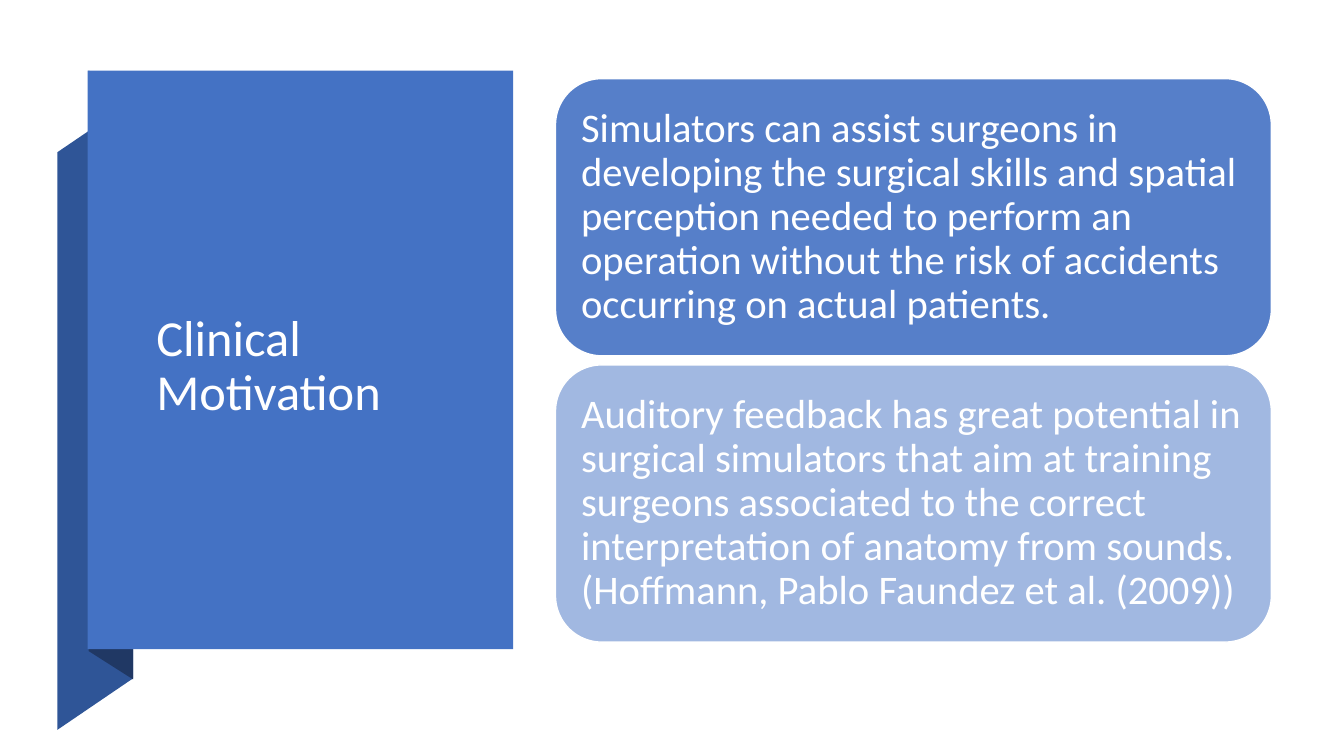
from pptx import Presentation
from pptx.dml.color import RGBColor
from pptx.enum.shapes import MSO_SHAPE
from pptx.enum.text import MSO_ANCHOR, MSO_AUTO_SIZE, PP_ALIGN
from pptx.oxml.ns import qn
from pptx.util import Inches, Pt
from lxml.etree import SubElement

BLUE = RGBColor(0x44, 0x72, 0xC4)
RIBBON_BLUE = RGBColor(0x2F, 0x55, 0x97)
FOLD_BLUE = RGBColor(0x20, 0x38, 0x64)
WHITE = RGBColor(0xFF, 0xFF, 0xFF)

prs = Presentation()
prs.slide_width = Inches(13.33)
prs.slide_height = Inches(7.5)
slide = prs.slides.add_slide(prs.slide_layouts[5])
shapes = slide.shapes


def write_text(shape, text, size, inset_x, inset_y):
    frame = shape.text_frame
    frame.text = text
    settings = {
        "word_wrap": True,
        "auto_size": MSO_AUTO_SIZE.NONE,
        "vertical_anchor": MSO_ANCHOR.MIDDLE,
        "margin_left": Inches(inset_x),
        "margin_right": Inches(inset_x),
        "margin_top": Inches(inset_y),
        "margin_bottom": Inches(inset_y),
    }
    for name, value in settings.items():
        setattr(frame, name, value)
    paragraph = frame.paragraphs[0]
    paragraph.alignment = PP_ALIGN.LEFT
    paragraph.line_spacing = 0.9
    font = paragraph.font
    font.name = "Calibri"
    font.size = Pt(size)
    font.color.rgb = WHITE


# Folded ribbon behind the title panel
ribbon_parts = [
    (RIBBON_BLUE, [(0.57, 7.24), (1.32, 6.73), (1.32, 1), (0.57, 1.51)]),
    (FOLD_BLUE, [(0.88, 6.46), (1.32, 6.74), (1.32, 0.99), (0.88, 0.7)]),
]
for color, corners in ribbon_parts:
    points = [(Inches(x), Inches(y)) for x, y in corners]
    builder = shapes.build_freeform(*points[0], scale=1.0)
    builder.add_line_segments(points[1:], close=True)
    ribbon = builder.convert_to_shape()
    ribbon.shadow.inherit = False
    ribbon.fill.solid()
    ribbon.fill.fore_color.rgb = color
    ribbon.line.fill.background()

# Title panel
panel = shapes.add_shape(
    MSO_SHAPE.RECTANGLE, Inches(0.87), Inches(0.7), Inches(4.22), Inches(5.74))
panel.shadow.inherit = False
panel.fill.solid()
panel.fill.fore_color.rgb = BLUE
panel.line.fill.background()

# Title, brought in front of the panel
title = shapes.title
title.left, title.top = Inches(1.45), Inches(1.67)
title.width, title.height = Inches(3.01), Inches(3.94)
write_text(title, "Clinical Motivation", 36, 0.1, 0.05)
panel._element.addnext(title._element)

# Statement cards, the second one paler
statements = [
    ("Simulators can assist surgeons in developing the surgical skills and "
     "spatial perception needed to perform an operation without the risk of "
     "accidents occurring on actual patients.", 90),
    ("Auditory feedback has great potential in surgical simulators that aim at "
     "training surgeons associated to the correct interpretation of anatomy "
     "from sounds. (Hoffmann, Pablo Faundez et al. (2009))", 50),
]
for row, (statement, opacity) in enumerate(statements):
    card = shapes.add_shape(
        MSO_SHAPE.ROUNDED_RECTANGLE,
        Inches(5.51), Inches(0.78 + row * 2.84), Inches(7.1), Inches(2.75))
    card.shadow.inherit = False
    card.fill.solid()
    card.fill.fore_color.rgb = BLUE
    fill_color = card._element.spPr.find(qn("a:solidFill")).find(qn("a:srgbClr"))
    SubElement(fill_color, qn("a:alpha"), val=str(opacity * 1000))
    card.line.color.rgb = WHITE
    card.line.width = Pt(1)
    write_text(card, statement, 29, 0.12, 0.12)

prs.save("out.pptx")
